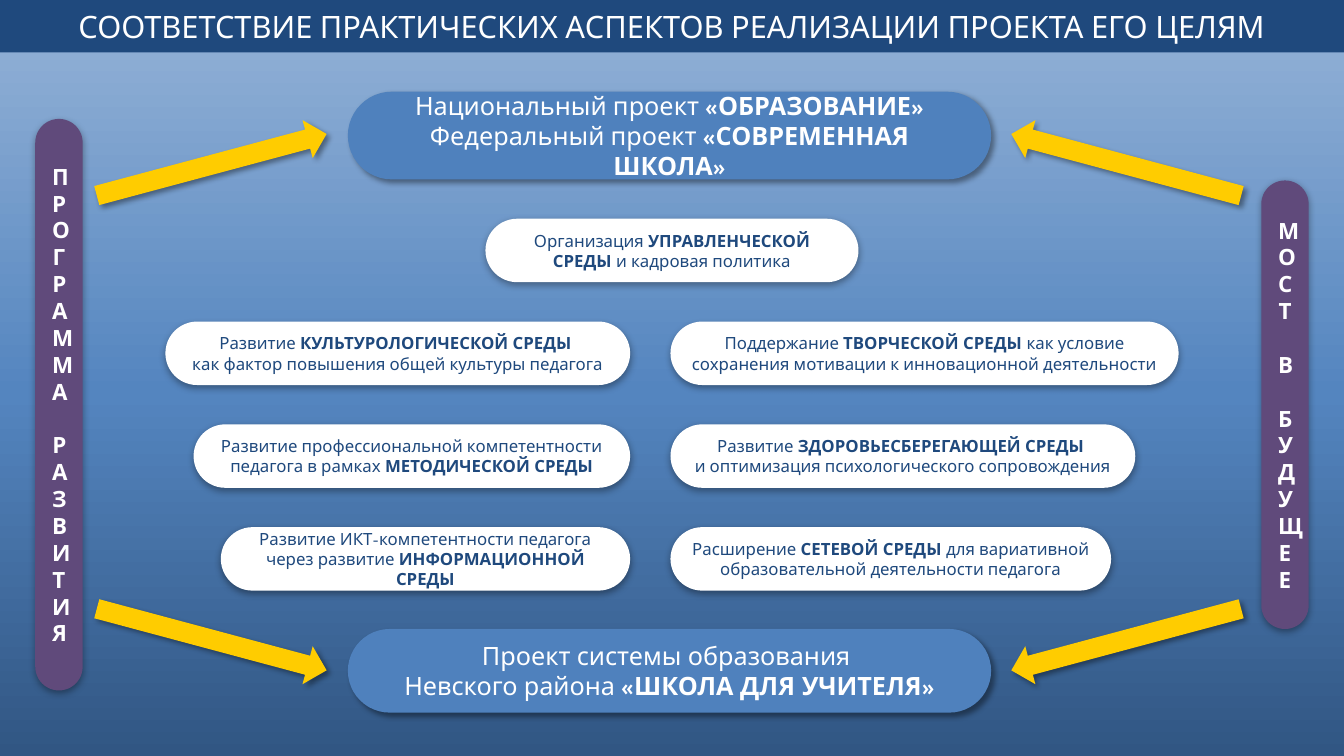
from copy import deepcopy

from lxml import etree
from pptx import Presentation
from pptx.dml.color import RGBColor
from pptx.enum import shapes, text
from pptx.oxml import ns
from pptx.util import Inches, Pt

# Content: spans alternate between regular and bold
TITLE = "СООТВЕТСТВИЕ ПРАКТИЧЕСКИХ АСПЕКТОВ РЕАЛИЗАЦИИ ПРОЕКТА ЕГО ЦЕЛЯМ"
BARS = [  # left, top, height, spans
    (12.51, 1.79, 4.45, ["", "МОСТ В БУДУЩЕЕ"]),
    (0.35, 1.18, 5.67, ["", "ПРОГРАММА РАЗВИТИЯ"]),
]
PROJECTS = [  # top, height, spans
    (0.91, 0.87, ["Национальный проект ", "«ОБРАЗОВАНИЕ»\n",
                  "Федеральный проект ", "«СОВРЕМЕННАЯ ШКОЛА»"]),
    (6.24, 0.83, ["Проект системы образования \nНевского района ", "«ШКОЛА ДЛЯ УЧИТЕЛЯ»"]),
]
LEADERSHIP = (3.7, ["Организация ", "УПРАВЛЕНЧЕСКОЙ СРЕДЫ ", "и кадровая политика"])
ENVIRONMENTS = [  # one row each: left pill, right pill (width, spans)
    ((4.61, ["Развитие ", "КУЛЬТУРОЛОГИЧЕСКОЙ СРЕДЫ \n",
             "как фактор повышения общей культуры педагога"]),
     (5.04, ["Поддержание ", "ТВОРЧЕСКОЙ СРЕДЫ ",
             "как условие сохранения мотивации к инновационной деятельности"])),
    ((4.33, ["Развитие профессиональной компетентности педагога в рамках ",
             "МЕТОДИЧЕСКОЙ СРЕДЫ"]),
     (4.61, ["Развитие ", "ЗДОРОВЬЕСБЕРЕГАЮЩЕЙ СРЕДЫ \n",
             "и оптимизация психологического сопровождения"])),
    ((4.06, ["Развитие ИКТ-компетентности педагога через развитие ",
             "ИНФОРМАЦИОННОЙ СРЕДЫ"]),
     (4.37, ["Расширение ", "СЕТЕВОЙ СРЕДЫ ",
             "для вариативной образовательной деятельности педагога"])),
]
ARROWS = [(0.92, 1.44, -15), (9.99, 1.44, 195), (0.92, 6.15, 15), (9.99, 6.15, 165)]

# Look
FONT = "League Spartan"
COLORS = {"navy": "1F497D", "blue": "4F81BD", "purple": "604A7B",
          "yellow": "FFCC00", "white": "FFFFFF", "black": "000000"}
BACKGROUND = [(0, "315683"), (0.48, "5485BF"), (1, "95B3D7")]
SOFT = {"alpha": 35, "blur": 5, "distance": 1.8, "angle": 90}
DEEP = {"alpha": 40, "blur": 4, "distance": 3, "angle": 45}
BAR = {"fill": "purple", "ink": "white", "size": 16, "after": 0, "shadow": SOFT}
PROJECT = {"fill": "blue", "ink": "white", "size": 18, "after": 10, "shadow": DEEP}
PILL = {"fill": "white", "ink": "navy", "size": 12, "after": 10, "shadow": SOFT}

# Grid
SLIDE_WIDTH, SLIDE_HEIGHT = 13.33, 7.5
PILL_HEIGHT, FIRST_ROW, ROW_STEP = 0.63, 2.17, 1.02
LEFT_EDGE, RIGHT_EDGE = 6.25, 6.65
PROJECT_WIDTH, BAR_WIDTH = 6.38, 0.47


def paint(shape, color):
    shape.fill.solid()
    shape.fill.fore_color.rgb = RGBColor.from_string(COLORS[color])
    shape.line.fill.background()


def add_shadow(shape, alpha, blur, distance, angle):
    shape.shadow.inherit = False
    effects = shape._element.spPr.find(ns.qn("a:effectLst"))
    outer = etree.SubElement(effects, ns.qn("a:outerShdw"), blurRad=str(Pt(blur)),
                             dist=str(Pt(distance)), dir=str(angle * 60000), rotWithShape="0")
    color = etree.SubElement(outer, ns.qn("a:srgbClr"), val=COLORS["black"])
    etree.SubElement(color, ns.qn("a:alpha"), val=str(alpha * 1000))


def add_span(para, words, ink, **formats):
    span = para.add_run()
    span.text = words
    for name, value in {"name": FONT, **formats}.items():
        setattr(span.font, name, value)
    span.font.color.rgb = RGBColor.from_string(COLORS[ink])
    return span


def write(shape, spans, style):
    frame = shape.text_frame
    for name, value in {"word_wrap": True, "vertical_anchor": text.MSO_ANCHOR.MIDDLE,
                        "auto_size": text.MSO_AUTO_SIZE.NONE}.items():
        setattr(frame, name, value)
    para = frame.paragraphs[0]
    para.alignment = text.PP_ALIGN.CENTER
    para.space_after = Pt(style["after"])
    for index, words in enumerate(spans):
        for line, piece in enumerate(words.split("\n")):
            if line:  # the break keeps the size of the text before it
                para.add_line_break()
                para._p[-1].append(deepcopy(span._r.rPr))
            if piece:
                span = add_span(para, piece, style["ink"], size=Pt(style["size"]),
                                bold=index % 2 == 1)


def add_pill(page, left, top, width, height, spans, style):
    box = page.shapes.add_shape(shapes.MSO_SHAPE.ROUNDED_RECTANGLE,
                                *map(Inches, (left, top, width, height)))
    box.adjustments[0] = 0.5
    paint(box, style["fill"])
    add_shadow(box, **style["shadow"])
    write(box, spans, style)
    return box


def add_background(page):
    fill = page.background.fill
    fill.gradient()
    fill.gradient_angle = 90
    stops = page._element.find(".//" + ns.qn("a:gsLst"))
    stops.append(deepcopy(stops[-1]))
    for stop, (position, color) in zip(fill.gradient_stops, BACKGROUND):
        stop.position = position
        stop.color.rgb = RGBColor.from_string(color)


def main():
    deck = Presentation()
    deck.slide_width, deck.slide_height = Inches(SLIDE_WIDTH), Inches(SLIDE_HEIGHT)
    page = deck.slides.add_slide(deck.slide_layouts[5])
    add_background(page)

    # Title band
    title = page.shapes.title
    for name, value in {"left": 0, "top": 0, "width": SLIDE_WIDTH, "height": 0.52}.items():
        setattr(title, name, Inches(value))
    paint(title, "navy")
    write(title, [TITLE], {"ink": "white", "size": 22, "after": 0})

    # Vertical side bars
    for left, top, height, spans in BARS:
        bar = add_pill(page, left, top, BAR_WIDTH, height, spans, BAR)
        bar.text_frame._txBody.bodyPr.set("vert", "wordArtVert")
        bar.text_frame.paragraphs[0].runs[0]._r.rPr.set("spc", "-100")

    # National and district projects
    for top, height, spans in PROJECTS:
        add_pill(page, 3.45, top, PROJECT_WIDTH, height, spans, PROJECT)

    # Environments
    width, spans = LEADERSHIP
    add_pill(page, (SLIDE_WIDTH - width) / 2, FIRST_ROW, width, PILL_HEIGHT, spans, PILL)
    for row, pair in enumerate(ENVIRONMENTS, start=1):
        top = FIRST_ROW + row * ROW_STEP
        for column, (width, spans) in enumerate(pair):
            left = RIGHT_EDGE if column else LEFT_EDGE - width
            add_pill(page, left, top, width, PILL_HEIGHT, spans, PILL)

    # Arrows from the bars to the projects
    for left, top, angle in ARROWS:
        arrow = page.shapes.add_shape(shapes.MSO_SHAPE.RIGHT_ARROW,
                                      *map(Inches, (left, top, 2.36, 0.39)))
        arrow.rotation = angle
        paint(arrow, "yellow")
        add_shadow(arrow, **DEEP)

    deck.save("out.pptx")


if __name__ == "__main__":
    main()
